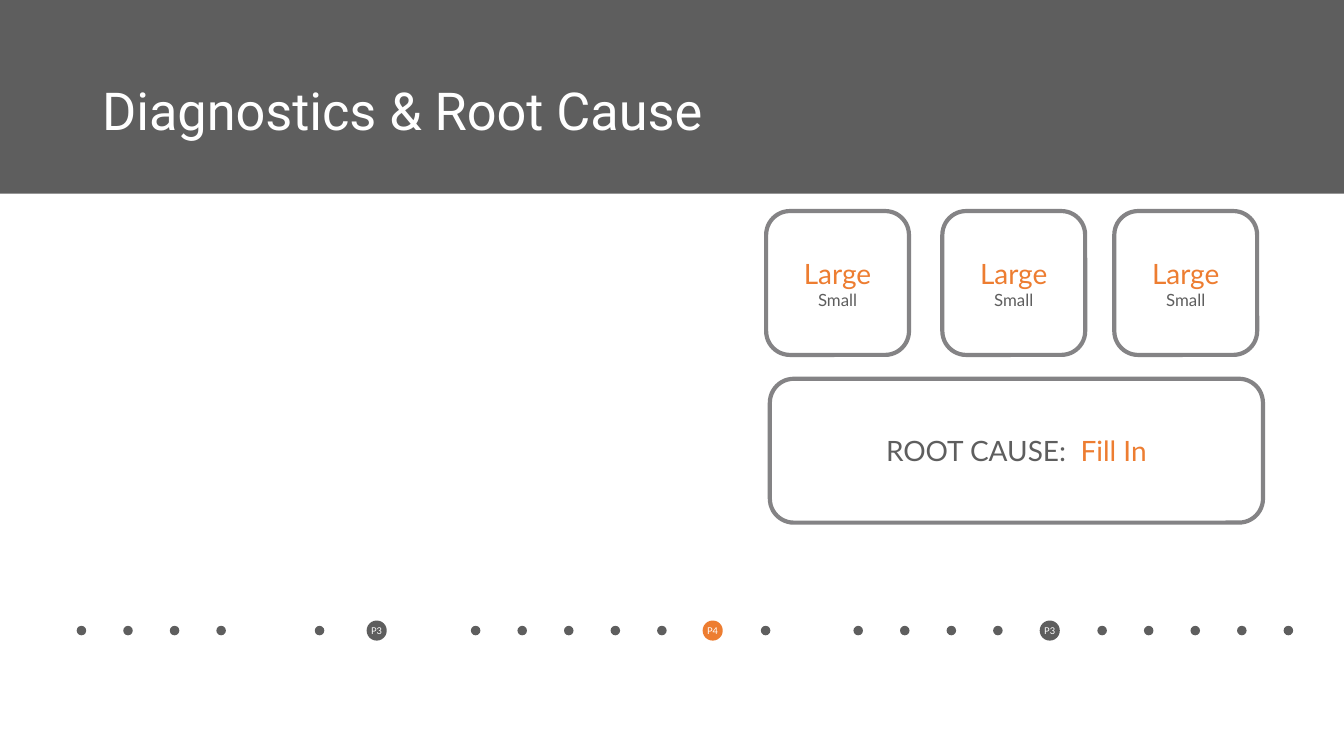
from pptx import Presentation
from pptx.dml.color import RGBColor
from pptx.enum.shapes import MSO_SHAPE
from pptx.enum.text import MSO_ANCHOR, PP_ALIGN
from pptx.util import Cm, Pt

RECT, ROUNDED, OVAL = MSO_SHAPE.RECTANGLE, MSO_SHAPE.ROUNDED_RECTANGLE, MSO_SHAPE.OVAL
MIDDLE, LEFT, CENTER = MSO_ANCHOR.MIDDLE, PP_ALIGN.LEFT, PP_ALIGN.CENTER

COLORS = {"grey": "5E5E5E", "border": "848385", "orange": "ED7D31", "white": "FFFFFF"}
SLIDE_W, SLIDE_H = 25.4, 14.29
CARD_TOP, CARD_W, CARD_H = 3.99, 2.7, 2.72
CARD_LEFTS = (14.48, 17.81, 21.06)

TIMELINE_Y, DOT_PITCH = 11.92, 0.88
DOT_SIZE, BADGE_SIZE = 0.18, 0.38
DOT_RUNS = ((1.54, 4), (6.04, 1), (8.99, 5), (14.47, 1), (16.22, 4), (20.83, 5))  # first centre, count
BADGES = ((7.12, "P3", "grey"), (13.47, "P4", "orange"), (19.84, "P3", "grey"))


def rgb(name):
    return RGBColor.from_string(COLORS[name])


def set_font(font, size, color, family="Lato"):
    font.name, font.size, font.color.rgb = family, Pt(size), rgb(color)


def set_frame(frame, inset_x=0.18, inset_y=0.1):
    frame.word_wrap = True
    frame.vertical_anchor = MIDDLE
    frame.margin_left = frame.margin_right = Cm(inset_x)
    frame.margin_top = frame.margin_bottom = Cm(inset_y)


def add_filled(shapes, kind, left, top, width, height, fill):
    shape = shapes.add_shape(kind, Cm(left), Cm(top), Cm(width), Cm(height))
    shape.shadow.inherit = False
    shape.fill.solid()
    shape.fill.fore_color.rgb = rgb(fill)
    shape.line.fill.background()
    return shape


def add_header(slide, text):
    band = add_filled(slide.shapes, RECT, 0, 0, SLIDE_W, 3.66, "grey")
    title = slide.shapes.title
    title._element.addprevious(band._element)  # band goes behind the title
    title.left, title.top, title.width, title.height = Cm(1.75), Cm(0.76), Cm(21.9), Cm(2.77)
    set_frame(title.text_frame)
    title.text_frame.text = text
    paragraph = title.text_frame.paragraphs[0]
    paragraph.alignment, paragraph.line_spacing = LEFT, 0.9
    set_font(paragraph.font, 28, "white", "Roboto")


def add_card(slide, left, top, width):
    """Add an outlined rounded box and return its text frame."""
    card = add_filled(slide.shapes, ROUNDED, left, top, width, CARD_H, "white")
    card.line.color.rgb = rgb("border")
    card.line.width = Pt(2.25)
    set_frame(card.text_frame)
    return card.text_frame


def add_metric_card(slide, left):
    frame = add_card(slide, left, CARD_TOP, CARD_W)
    frame.text = "Large\nSmall"
    for paragraph, size, color in zip(frame.paragraphs, (15, 9), ("orange", "grey")):
        paragraph.alignment = CENTER
        set_font(paragraph.font, size, color)


def add_root_cause(slide):
    paragraph = add_card(slide, 14.55, 7.16, 9.32).paragraphs[0]
    paragraph.alignment = CENTER
    for text, color in (("ROOT CAUSE:  ", "grey"), ("Fill In", "orange")):
        run = paragraph.add_run()
        run.text = text
        set_font(run.font, 15, color)


def add_circle(shapes, center_x, size, fill):
    return add_filled(shapes, OVAL, center_x - size / 2, TIMELINE_Y - size / 2, size, size, fill)


def add_badge(shapes, center_x, label, fill):
    frame = add_circle(shapes, center_x, BADGE_SIZE, fill).text_frame
    set_frame(frame, 0, 0)
    frame.text = label
    frame.paragraphs[0].alignment = CENTER
    set_font(frame.paragraphs[0].font, 5, "white")


def add_timeline(slide):
    shapes = slide.shapes.add_group_shape().shapes
    for first, count in DOT_RUNS:
        for step in range(count):
            add_circle(shapes, first + step * DOT_PITCH, DOT_SIZE, "grey")
    for center_x, label, fill in BADGES:
        add_badge(shapes, center_x, label, fill)


def main():
    deck = Presentation()
    deck.slide_width, deck.slide_height = Cm(SLIDE_W), Cm(SLIDE_H)
    slide = deck.slides.add_slide(deck.slide_layouts.get_by_name("Title Only"))
    add_header(slide, "Diagnostics & Root Cause")
    for left in CARD_LEFTS:
        add_metric_card(slide, left)
    add_root_cause(slide)
    add_timeline(slide)
    deck.save("out.pptx")


if __name__ == "__main__":
    main()
